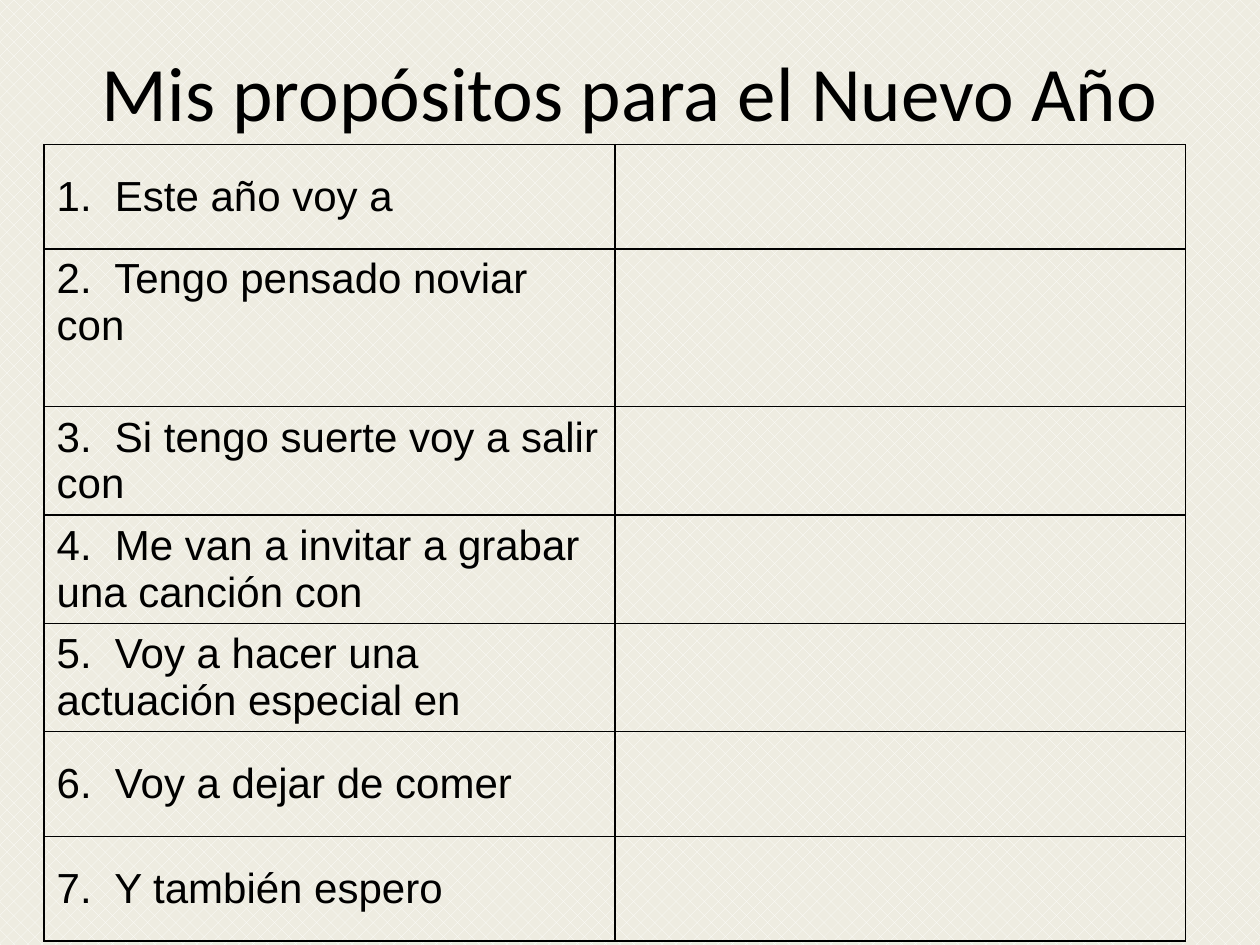
from lxml import etree
from pptx import Presentation
from pptx.dml.color import RGBColor
from pptx.enum.dml import MSO_PATTERN
from pptx.enum.text import MSO_ANCHOR, PP_ALIGN
from pptx.oxml.ns import qn
from pptx.util import Inches, Pt

TOP, MIDDLE = MSO_ANCHOR.TOP, MSO_ANCHOR.MIDDLE
CENTER = PP_ALIGN.CENTER
PATTERN = MSO_PATTERN.PERCENT_25
TITLE_ONLY = 5

COLORS = {"ink": "000000", "paper": "EEECE1", "weave": "FFFFFF"}
SHORT, TALL, EXTRA = 0.83, 0.86, 1.25

# Prompt, row height in inches, vertical anchor
RESOLUTIONS = [
    ("1.  Este año voy a", SHORT, MIDDLE),
    ("2.  Tengo pensado noviar con", EXTRA, TOP),
    ("3.  Si tengo suerte voy a salir con", TALL, MIDDLE),
    ("4.  Me van a invitar a grabar una canción con", TALL, MIDDLE),
    ("5.  Voy a hacer una actuación especial en", TALL, MIDDLE),
    ("6.  Voy a dejar de comer", SHORT, MIDDLE),
    ("7.  Y también espero", SHORT, MIDDLE),
]


def color(name):
    return RGBColor.from_string(COLORS[name])


class Worksheet:
    """Holds the style and the current slide."""

    title_font, title_size = "Calibri", 44
    body_font, body_size = "Arial", 24
    border_width = 1

    def __init__(self, presentation):
        self.width = presentation.slide_width
        self.height = presentation.slide_height
        self.slide = presentation.slides.add_slide(
            presentation.slide_layouts[TITLE_ONLY])

    def area(self, left, top, width, height):
        """Turn shares of the slide into lengths."""
        return (round(left * self.width), round(top * self.height),
                round(width * self.width), round(height * self.height))

    def background(self):
        fill = self.slide.background.fill
        fill.patterned()
        fill.pattern = PATTERN
        fill.fore_color.rgb = color("weave")
        fill.back_color.rgb = color("paper")

    def add_text(self, paragraph, text, font_name, size):
        run = paragraph.add_run()
        run.text = text
        run.font.name = font_name
        run.font.size = Pt(size)
        run.font.color.rgb = color("ink")

    def title(self, text, *shares):
        shape = self.slide.shapes.title
        shape.left, shape.top, shape.width, shape.height = self.area(*shares)
        frame = shape.text_frame
        frame.word_wrap = True
        frame.vertical_anchor = TOP
        paragraph = frame.paragraphs[0]
        paragraph.alignment = CENTER
        self.add_text(paragraph, text, self.title_font, self.title_size)

    def border(self, cell):
        properties = cell._tc.get_or_add_tcPr()
        for position, side in enumerate(("lnL", "lnR", "lnT", "lnB")):
            line = etree.Element(qn(f"a:{side}"), w=str(Pt(self.border_width)))
            fill = etree.SubElement(line, qn("a:solidFill"))
            etree.SubElement(fill, qn("a:srgbClr"), val=COLORS["ink"])
            properties.insert(position, line)

    def table(self, rows, left, top, width):
        """Draw one row per prompt, with an empty answer cell beside it."""
        height = sum(row[1] for row in rows) * Inches(1) / self.height
        table = self.slide.shapes.add_table(
            len(rows), 2, *self.area(left, top, width, height)).table
        table.first_row = table.horz_banding = False
        for row, (prompt, row_height, anchor) in zip(table.rows, rows):
            row.height = Inches(row_height)
            for cell in row.cells:
                cell.fill.background()
                cell.vertical_anchor = anchor
                self.border(cell)
            self.add_text(row.cells[0].text_frame.paragraphs[0], prompt,
                          self.body_font, self.body_size)


def main():
    presentation = Presentation()
    presentation.slide_width = Inches(10)
    presentation.slide_height = Inches(7.5)
    worksheet = Worksheet(presentation)
    worksheet.background()
    worksheet.title("Mis propósitos para el Nuevo Año", 0.05, 0.04, 0.9, 0.17)
    worksheet.table(RESOLUTIONS, 0.035, 0.153, 0.906)
    presentation.save("out.pptx")


if __name__ == "__main__":
    main()
